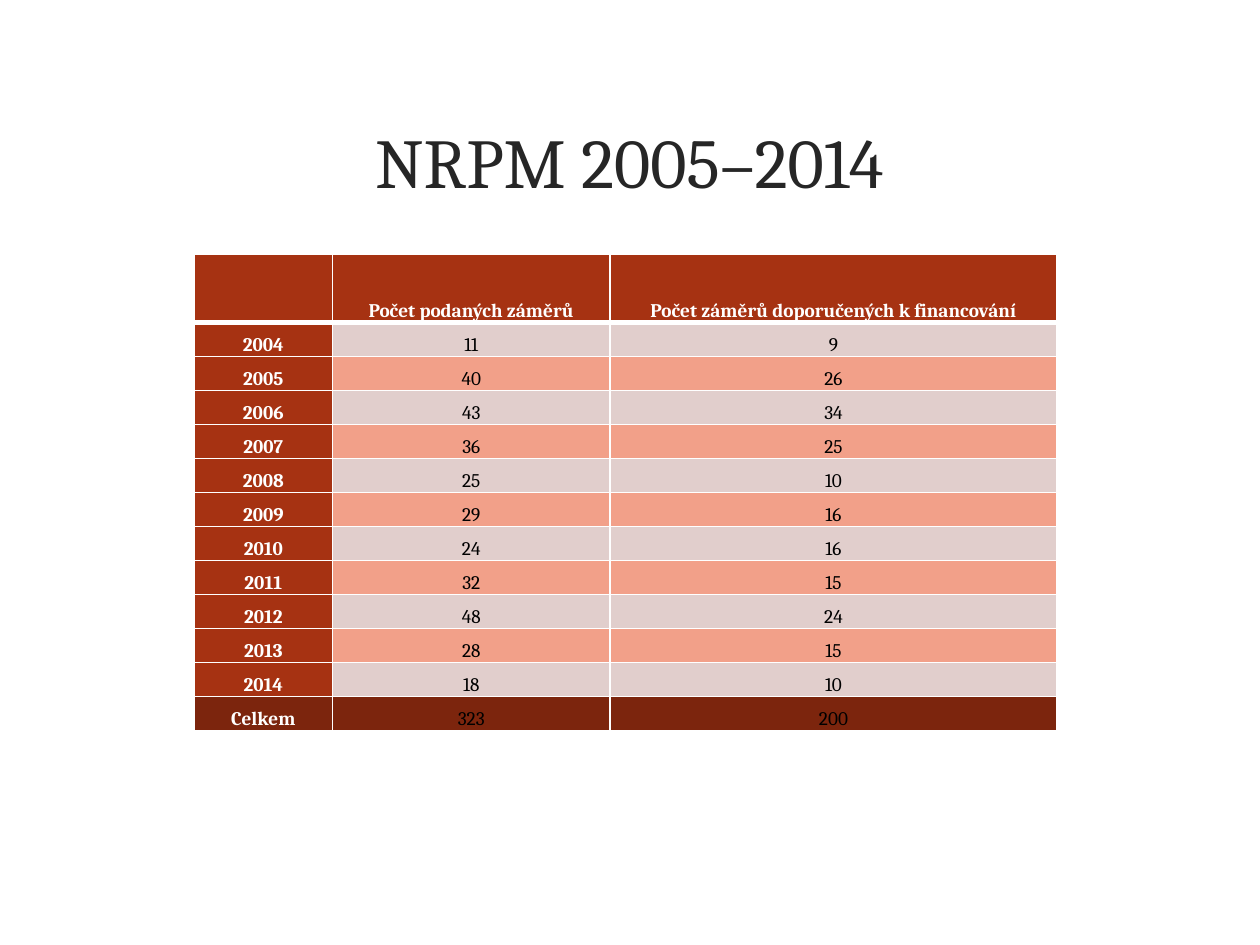
"""Build the NRPM 2005–2014 slide with its table of submitted and recommended projects."""
from lxml import etree
from pptx import Presentation
from pptx.dml.color import RGBColor as RGB
from pptx.enum.text import MSO_ANCHOR as Anchor, PP_ALIGN as Align
from pptx.oxml.ns import qn
from pptx.util import Inches, Pt

HUES = {
    "title": "262626", "head": "A63212", "odd": "E1CECC", "even": "F2A089",
    "total": "7C250D", "white": "FFFFFF", "black": "000000",
}
FONT = "Cambria"
ROWS = [
    ("", "Počet podaných záměrů", "Počet záměrů doporučených k financování"),
    ("2004", "11", "9"),
    ("2005", "40", "26"),
    ("2006", "43", "34"),
    ("2007", "36", "25"),
    ("2008", "25", "10"),
    ("2009", "29", "16"),
    ("2010", "24", "16"),
    ("2011", "32", "15"),
    ("2012", "48", "24"),
    ("2013", "28", "15"),
    ("2014", "18", "10"),
    ("Celkem", "323", "200"),
]
WIDTHS = [1.1, 2.2, 3.55]
LAST = len(ROWS) - 1


def style(para, size, hue, bold=False):
    para.alignment = Align.CENTER
    font = para.font
    font.name, font.size, font.bold = FONT, Pt(size), bold
    font.color.rgb = RGB.from_string(HUES[hue])


def border(cell, side, width):
    line = etree.SubElement(cell._tc.get_or_add_tcPr(), qn(f"a:ln{side}"), w=str(Pt(width)))
    fill = etree.SubElement(line, qn("a:solidFill"))
    etree.SubElement(fill, qn("a:srgbClr"), val=HUES["white"])


deck = Presentation()
deck.slide_width, deck.slide_height = Inches(10), Inches(7.5)
slide = deck.slides.add_slide(deck.slide_layouts[5])

title = slide.shapes.title
title.left, title.top = Inches(0.6), Inches(0.48)
title.width, title.height = Inches(8.79), Inches(1.58)
frame = title.text_frame
frame.text = "NRPM 2005–2014"
frame.vertical_anchor = Anchor.MIDDLE
style(frame.paragraphs[0], 40, "title")

table = slide.shapes.add_table(
    len(ROWS), len(WIDTHS), Inches(1.54), Inches(2.02), Inches(6.85), Inches(3.83)
).table
for col, width in zip(table.columns, WIDTHS):
    col.width = Inches(width)

for r, row in enumerate(ROWS):
    table.rows[r].height = Inches(0.27 if r else 0.54)
    for c, text in enumerate(row):
        cell = table.cell(r, c)
        label = r == 0 or c == 0
        cell.text = text
        cell.vertical_anchor = Anchor.BOTTOM
        cell.margin_left = cell.margin_right = Inches(0.05)
        cell.margin_top = cell.margin_bottom = 0
        para = cell.text_frame.paragraphs[0]
        para.line_spacing = 1.15
        style(para, 11, "white" if label else "black", label)
        for side in "LRTB":
            thick = (r, side) in [(0, "B"), (1, "T")]
            border(cell, side, 3 if thick else 1)
        if r == LAST:
            hue = "total"
        elif label:
            hue = "head"
        else:
            hue = "odd" if r % 2 else "even"
        cell.fill.solid()
        cell.fill.fore_color.rgb = RGB.from_string(HUES[hue])

deck.save("out.pptx")
